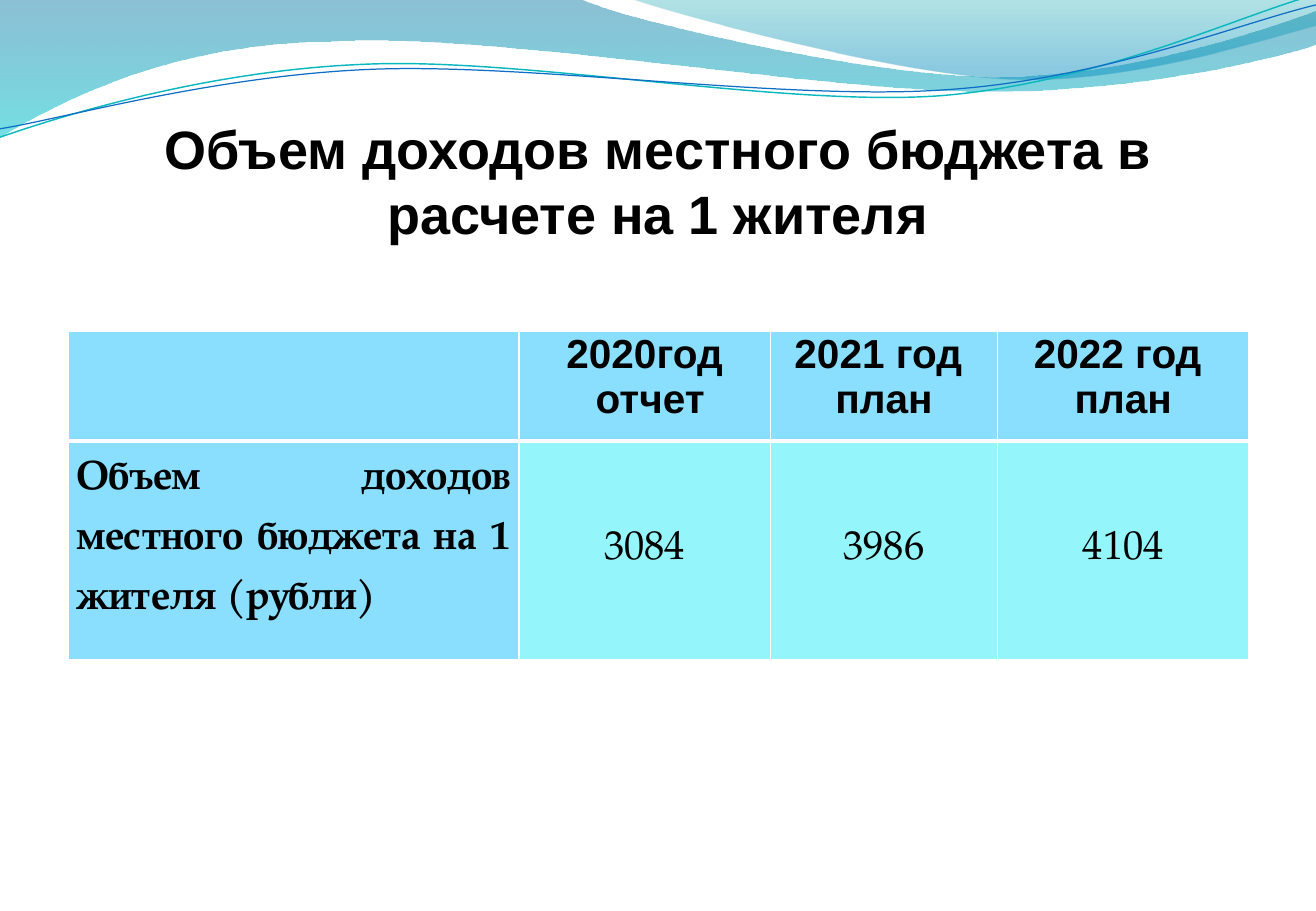
import pptx
import pptx.util
import pptx.dml.color
import pptx.enum.text
import pptx.oxml
import pptx.oxml.ns

Inches = pptx.util.Inches
Pt = pptx.util.Pt
ALIGN = pptx.enum.text.PP_ALIGN
ANCHOR = pptx.enum.text.MSO_ANCHOR

TITLE = "Объем доходов местного бюджета в расчете на 1 жителя"
HEADERS = ["", "2020год\n отчет", "2021 год \nплан", "2022 год \nплан"]
VALUES = ["Объем доходов местного бюджета на 1 жителя (рубли)", "3084", "3986", "4104"]
COLUMN_WIDTHS = [3.71, 2.07, 1.87, 2.07]
ROW_HEIGHTS = [0.9, 1.8]
BLUE, AQUA, WHITE, BLACK = "8ADFFF", "94F5FA", "FFFFFF", "000000"

WAVES = [
    {"points": [(0, -0.01), (4.77, -0.01),
                (5.15, 0.17, 7.19, 0.63, 8.22, 0.63), (9.24, 0.63, 10.38, 0.26, 10.83, 0.09),
                (10.85, 0.36),
                (10.65, 0.44, 9.42, 0.76, 8.08, 0.75), (6.74, 0.75, 4.14, 0.28, 2.79, 0.34),
                (1.4, 0.35, 0.5, 0.83, -0.01, 1.13)],
     "gradient": [(0, "0074A1", 45), (100, "00C6CF", 55)]},
    {"points": [(5.19, -0.01),
                (5.52, 0.11, 7.39, 0.62, 8.33, 0.65), (9.27, 0.69, 10.42, 0.32, 10.83, 0.21),
                (10.83, 0)],
     "gradient": [(0, "00A1A9", 30), (80, "008BBF", 45)]},
    {"points": [(0, 1.13),
                (0.52, 0.95, 1.71, 0.58, 3, 0.53), (4.28, 0.47, 6.42, 0.88, 7.72, 0.79),
                (9.02, 0.69, 10.17, 0.14, 10.81, -0.04)],
     "line": ("0AB8BF", 0.85)},
    {"points": [(0, 1.06),
                (0.51, 0.98, 1.77, 0.62, 3.07, 0.57), (4.36, 0.52, 6.47, 0.83, 7.76, 0.74),
                (9.06, 0.66, 10.2, 0.19, 10.83, 0.04)],
     "line": ("0F6FC6", 0.75)},
]


def color(value):
    return pptx.dml.color.RGBColor.from_string(value)


def set_values(target, values):
    for name, value in values.items():
        setattr(target, name, value)


def xml(tag, content=""):
    namespace = pptx.oxml.ns.nsdecls("a")
    name = tag.split()[0]
    return pptx.oxml.parse_xml(f"<a:{tag} {namespace}>{content}</a:{name}>")


def bend_segments(shape, points):
    segments = iter(list(shape.element.iter(pptx.oxml.ns.qn("a:lnTo"))))
    for point in points[1:]:
        first = next(segments)
        if len(point) == 2:
            continue
        curve = xml("cubicBezTo")
        first.addprevious(curve)
        for segment in (first, next(segments), next(segments)):
            curve.append(segment[0])
            segment.getparent().remove(segment)


def add_wave(slide, wave):
    outline = [(Inches(point[i]), Inches(point[i + 1]))
               for point in wave["points"] for i in range(0, len(point), 2)]
    builder = slide.shapes.build_freeform(*outline[0], scale=1.0)
    builder.add_line_segments(outline[1:], close="gradient" in wave)
    shape = builder.convert_to_shape()
    bend_segments(shape, wave["points"])
    shape.shadow.inherit = False
    shape.fill.background()
    if "line" in wave:
        line_color, width = wave["line"]
        shape.line.color.rgb = color(line_color)
        shape.line.width = Pt(width)
        return
    shape.line.fill.background()
    stops = "".join(
        f'<a:gs pos="{position * 1000}"><a:srgbClr val="{stop}">'
        f'<a:alpha val="{alpha * 1000}"/></a:srgbClr></a:gs>'
        for position, stop, alpha in wave["gradient"])
    gradient = xml("gradFill", f'<a:gsLst>{stops}</a:gsLst><a:lin ang="5400000" scaled="0"/>')
    properties = shape.element.spPr
    properties.replace(properties.find(pptx.oxml.ns.qn("a:noFill")), gradient)


def write(frame, text, alignment, font, spacing=None):
    frame.text = text
    for paragraph in frame.paragraphs:
        set_values(paragraph, {"alignment": alignment, "line_spacing": spacing})
        for run in paragraph.runs:
            set_values(run.font, font)
            run.font.color.rgb = color(BLACK)


def add_title(slide):
    title = slide.shapes.title
    slide.shapes.element.append(title.element)
    set_values(title, {"left": Inches(0.54), "top": Inches(0.77),
                       "width": Inches(9.75), "height": Inches(1.25)})
    set_values(title.text_frame, {
        "margin_left": 0, "margin_right": 0, "margin_top": Inches(0.05), "margin_bottom": 0,
        "vertical_anchor": ANCHOR.BOTTOM, "word_wrap": True,
        "auto_size": pptx.enum.text.MSO_AUTO_SIZE.NONE})
    write(title.text_frame, TITLE, ALIGN.CENTER,
          {"name": "Arial", "size": Pt(32), "bold": True})


def format_cell(cell, text, row, column):
    is_header, is_label = row == 0, column == 0
    widths = {"lnL": 1, "lnR": 1, "lnT": 1, "lnB": 3 if is_header else 1}
    if not is_header:
        widths["lnT"] = 3
    for side, width in widths.items():
        cell._tc.get_or_add_tcPr().append(xml(
            f'{side} w="{Pt(width)}"',
            f'<a:solidFill><a:srgbClr val="{WHITE}"/></a:solidFill>'))
    cell.fill.solid()
    cell.fill.fore_color.rgb = color(BLUE if is_header or is_label else AQUA)
    set_values(cell, {
        "margin_left": Inches(0.07), "margin_right": Inches(0.07),
        "margin_top": 0, "margin_bottom": 0,
        "vertical_anchor": ANCHOR.TOP if is_header or is_label else ANCHOR.MIDDLE})
    font = {"name": "Arial" if is_header else "TeX Gyre Pagella",
            "size": Pt(24), "bold": is_header or is_label}
    justified = is_label and not is_header
    write(cell.text_frame, text, ALIGN.JUSTIFY if justified else ALIGN.CENTER,
          font, 1.5 if justified else None)


def add_income_table(slide):
    table = slide.shapes.add_table(
        len(ROW_HEIGHTS), len(COLUMN_WIDTHS), Inches(0.56), Inches(2.73),
        Inches(sum(COLUMN_WIDTHS)), Inches(sum(ROW_HEIGHTS))).table
    table.horz_banding = False
    for column, width in zip(table.columns, COLUMN_WIDTHS):
        column.width = Inches(width)
    for row, height in zip(table.rows, ROW_HEIGHTS):
        row.height = Inches(height)
    for row, texts in enumerate([HEADERS, VALUES]):
        for column, text in enumerate(texts):
            format_cell(table.cell(row, column), text, row, column)


def main():
    presentation = pptx.Presentation()
    set_values(presentation, {"slide_width": Inches(10.83), "slide_height": Inches(7.5)})
    slide = presentation.slides.add_slide(presentation.slide_layouts[5])
    for wave in WAVES:
        add_wave(slide, wave)
    add_title(slide)
    add_income_table(slide)
    presentation.save("out.pptx")


if __name__ == "__main__":
    main()
